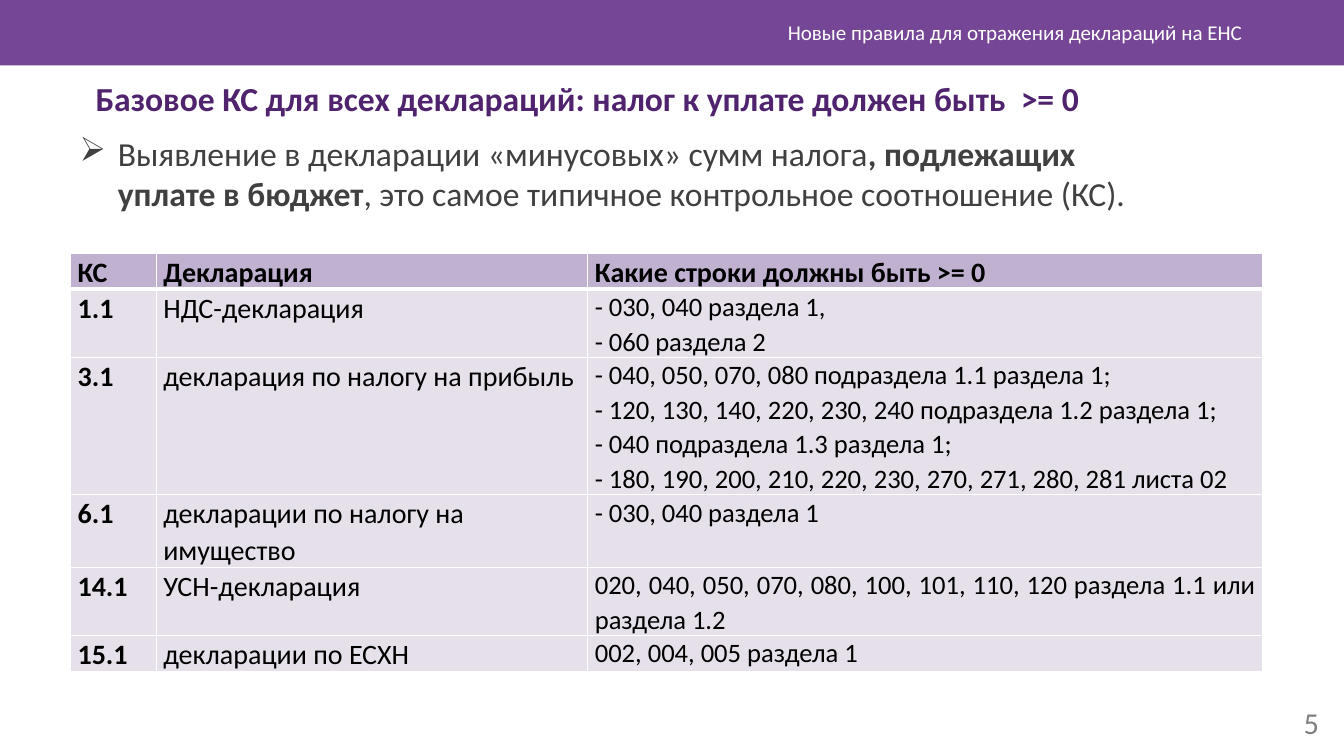
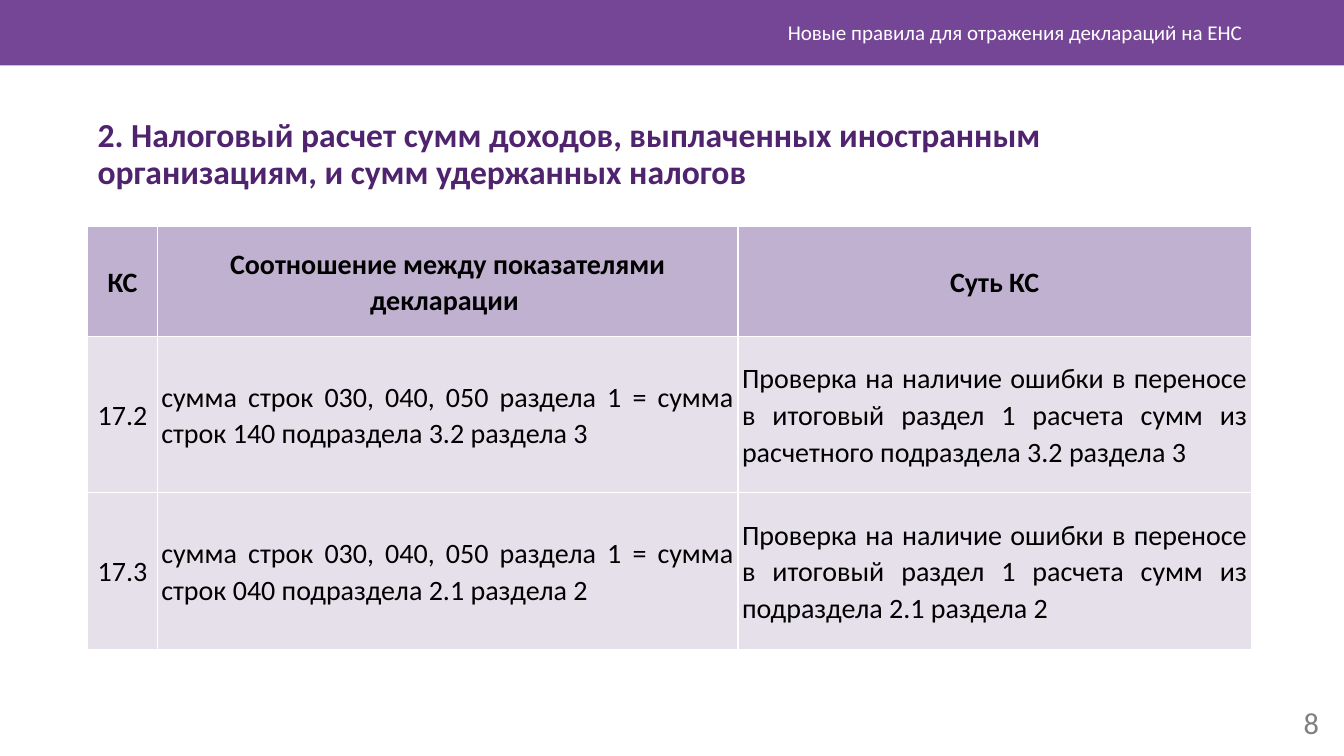
from lxml.etree import SubElement
from pptx import Presentation
from pptx.dml.color import RGBColor
from pptx.enum.shapes import MSO_SHAPE
from pptx.enum.text import MSO_ANCHOR, PP_ALIGN
from pptx.oxml.ns import qn
from pptx.util import Inches, Pt

FONT = "Calibri"
VIOLET, PLUM, LILAC, MIST = "764696", "50236E", "C1B1D1", "E6E0EB"
WHITE, BLACK, DARK, GREY = "FFFFFF", "000000", "404040", "808080"
LEFT, RIGHT = PP_ALIGN.LEFT, PP_ALIGN.RIGHT
MID, FULL = PP_ALIGN.CENTER, PP_ALIGN.JUSTIFY
WIDE, TALL = 13.33, 7.5
BAND = 0.65
TOPIC = "Новые правила для отражения деклараций на ЕНС"

BASE = [
    ("КС", "Декларация", "Какие строки должны быть >= 0"),
    ("1.1", "НДС-декларация", "- 030, 040 раздела 1,\n- 060 раздела 2"),
    ("3.1", "декларация по налогу на прибыль",
     "- 040, 050, 070, 080 подраздела 1.1 раздела 1;\n"
     "- 120, 130, 140, 220, 230, 240 подраздела 1.2 раздела 1;\n"
     "- 040 подраздела 1.3 раздела 1;\n"
     "- 180, 190, 200, 210, 220, 230, 270, 271, 280, 281 листа 02"),
    ("6.1", "декларации по налогу на имущество", "- 030, 040 раздела 1"),
    ("14.1", "УСН-декларация",
     "020, 040, 050, 070, 080, 100, 101, 110, 120 раздела 1.1 или раздела 1.2"),
    ("15.1", "декларации по ЕСХН", "002, 004, 005 раздела 1"),
]
SUMS = [
    ("КС", "Соотношение между показателями декларации ", "Суть КС"),
    ("17.2",
     "сумма строк 030, 040, 050 раздела 1 = сумма строк 140 подраздела 3.2 раздела 3",
     "Проверка на наличие ошибки в переносе в итоговый раздел 1 расчета сумм "
     "из расчетного подраздела 3.2 раздела 3"),
    ("17.3",
     "сумма строк 030, 040, 050 раздела 1 = сумма строк 040 подраздела 2.1 раздела 2",
     "Проверка на наличие ошибки в переносе в итоговый раздел 1 расчета сумм "
     "из подраздела 2.1 раздела 2"),
]


def paint(fill, color):
    """Fill a shape or cell with a solid hex colour."""
    fill.solid()
    fill.fore_color.rgb = RGBColor.from_string(color)


def write(frame, text, size=20, color=BLACK, bold=False, align=LEFT,
          space=1.0, mark=None, hang=0):
    """Write lines of text, or a list of (text, bold) runs, into a frame."""
    frame.word_wrap = True
    lines = text.split("\n") if isinstance(text, str) else [text]
    for i, line in enumerate(lines):
        para = frame.add_paragraph() if i else frame.paragraphs[0]
        para.alignment, para.line_spacing = align, space
        if mark:
            props = para._p.get_or_add_pPr()
            props.set("marL", str(Inches(hang)))
            props.set("indent", str(-Inches(hang)))
            SubElement(props, qn("a:buChar")).set("char", mark)
        for part, heavy in [(line, bold)] if isinstance(line, str) else line:
            run = para.add_run()
            run.text = part
            font = run.font
            font.name, font.size, font.bold = FONT, Pt(size), heavy
            font.color.rgb = RGBColor.from_string(color)


def label(slide, box, text, anchor=MSO_ANCHOR.TOP, **style):
    """Place a text box."""
    frame = slide.shapes.add_textbox(*map(Inches, box)).text_frame
    frame.vertical_anchor = anchor
    write(frame, text, **style)


def edge(cell, **widths):
    """Draw white cell borders, with widths in points by side."""
    props = cell._tc.get_or_add_tcPr()
    for side in "LRTB":
        line = SubElement(props, qn("a:ln" + side))
        line.set("w", str(Pt(widths.get(side, 1))))
        fill = SubElement(line, qn("a:solidFill"))
        SubElement(fill, qn("a:srgbClr")).set("val", WHITE)


def grid(slide, left, top, cols, rows, data, style, pad, anchor, rule=1):
    """Place a table whose style function formats the cell at (row, column)."""
    box = map(Inches, (left, top, sum(cols), sum(rows)))
    table = slide.shapes.add_table(len(rows), len(cols), *box).table
    table.horz_banding = False
    for col, width in zip(table.columns, cols):
        col.width = Inches(width)
    for row, height in zip(table.rows, rows):
        row.height = Inches(height)
    for r, line in enumerate(data):
        for c, text in enumerate(line):
            cell = table.cell(r, c)
            edge(cell, T=rule if r == 1 else 1, B=1 if r else rule)
            paint(cell.fill, MIST if r else LILAC)
            cell.margin_left = cell.margin_right = Inches(pad[0])
            cell.margin_top = cell.margin_bottom = Inches(pad[1])
            cell.vertical_anchor = anchor
            write(cell.text_frame, text, space=1.07, **style(r, c))


def start(deck, number, title, left, top):
    """Add a slide with its band, topic, page number and title."""
    slide = deck.slides.add_slide(deck.slide_layouts[6])
    band = slide.shapes.add_shape(MSO_SHAPE.RECTANGLE, 0, 0, deck.slide_width, Inches(BAND))
    band.shadow.inherit = False
    band.line.fill.background()
    paint(band.fill, VIOLET)
    middle = MSO_ANCHOR.MIDDLE
    label(slide, (12.51, 6.97, 0.67, 0.4), str(number), middle,
          size=21.7, color=GREY, align=RIGHT)
    label(slide, (3.54, 0.12, 8.88, 0.4), TOPIC, middle,
          size=15, color=WHITE, align=RIGHT)
    label(slide, (left, top, 10.43, 0.99), title,
          size=24, color=PLUM, bold=True, space=0.9)
    return slide


def base(deck):
    """Build the slide on the basic check for all returns."""
    def style(r, c):
        """Format a cell of the basic check table."""
        return dict(size=19 if r and c == 2 else 20, bold=r == 0 or c == 0,
                    align=(FULL, LEFT, FULL)[c])

    slide = start(deck, 5, "Базовое КС для всех деклараций: налог к уплате должен быть  >= 0",
                  0.85, 0.77)
    label(slide, (0.69, 1.27, 10.91, 0.91),
          [("Выявление в декларации «минусовых» сумм налога", False),
           (", подлежащих уплате в бюджет", True),
           (", это самое типичное контрольное соотношение (КС).", False)],
          size=24, color=DARK, mark="➢", hang=0.38)
    grid(slide, 0.7, 2.51, (0.85, 4.28, 6.69), (0.36, 0.67, 1.36, 0.72, 0.67, 0.36),
         BASE, style, (0.07, 0), MSO_ANCHOR.TOP, rule=3)


def sums(deck):
    """Build the slide on the foreign income return."""
    def style(r, c):
        """Format a cell of the foreign income table."""
        return dict(bold=r == 0, align=FULL if r and c else MID)

    slide = start(deck, 8, "2. Налоговый расчет сумм доходов, выплаченных иностранным "
                  "организациям, и сумм удержанных налогов", 0.87, 1.13)
    grid(slide, 0.87, 2.25, (0.69, 5.76, 5.09), (1.09, 1.55, 1.55),
         SUMS, style, (0.04, 0.07), MSO_ANCHOR.MIDDLE)


def main():
    """Build and save the deck."""
    deck = Presentation()
    deck.slide_width, deck.slide_height = Inches(WIDE), Inches(TALL)
    base(deck)
    sums(deck)
    deck.save("out.pptx")


if __name__ == "__main__":
    main()
